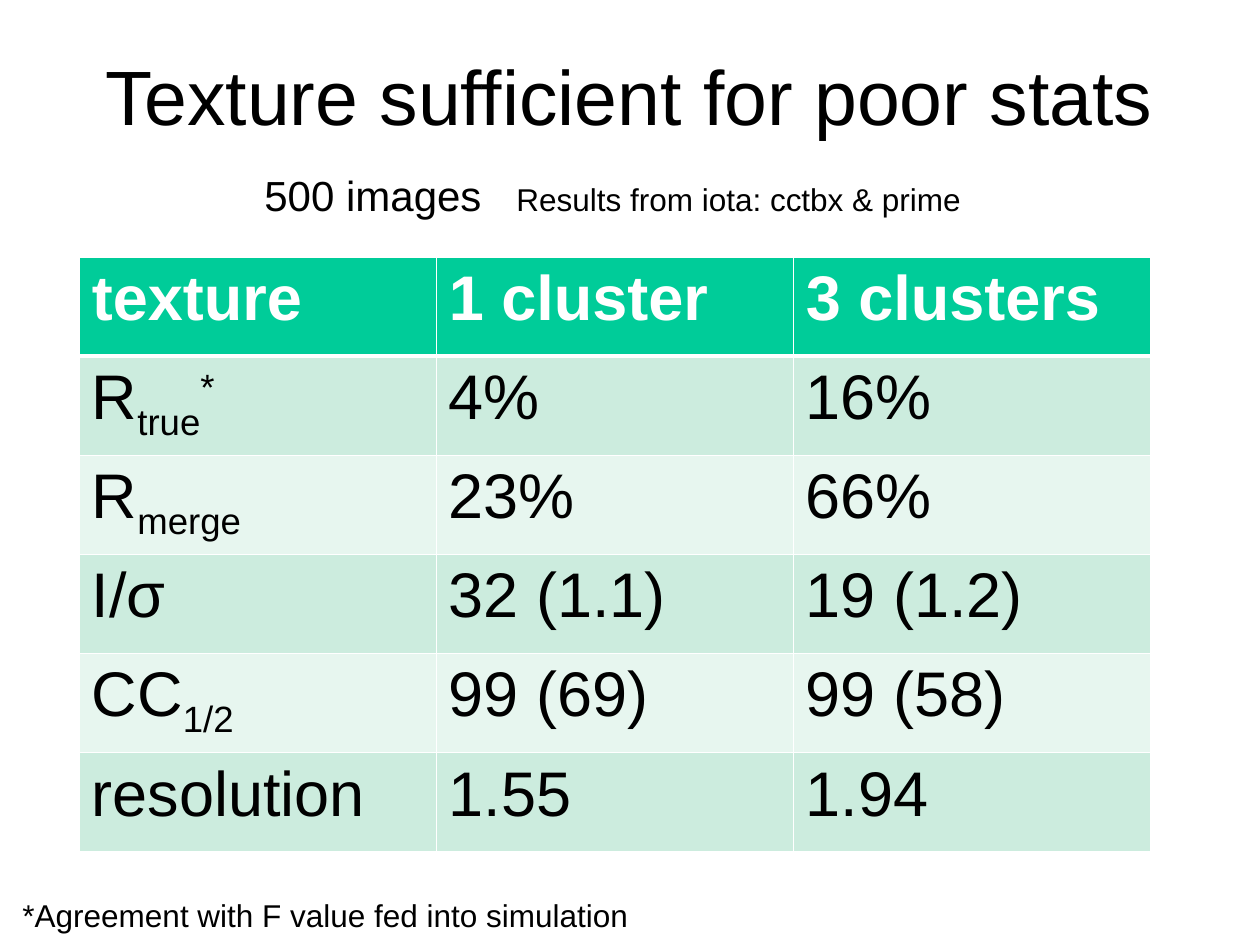
from dataclasses import dataclass

from lxml import etree
from pptx import Presentation
from pptx.dml.color import RGBColor
from pptx.enum import text
from pptx.oxml import ns
from pptx.util import Inches, Pt


@dataclass(frozen=True)
class Theme:
    font: str = "Arial"
    ink: str = "000000"
    white: str = "FFFFFF"
    header: str = "00CC99"
    bands: tuple = ("CCECDE", "E7F6EF")
    title_size: int = 44
    table_size: int = 36
    lead_size: int = 24
    note_size: int = 18
    rule: int = 1
    header_rule: int = 3


THEME = Theme()
SUBSCRIPT, SUPERSCRIPT = -25000, 30000

# Each cell is a list of (wording, baseline shift) pieces.
RESULTS = [
    [[("texture", 0)], [("1 cluster", 0)], [("3 clusters", 0)]],
    [[("R", 0), ("true", SUBSCRIPT), ("*", SUPERSCRIPT)], [("4%", 0)], [("16%", 0)]],
    [[("R", 0), ("merge", SUBSCRIPT)], [("23%", 0)], [("66%", 0)]],
    [[("I/σ", 0)], [("32 (1.1)", 0)], [("19 (1.2)", 0)]],
    [[("CC", 0), ("1/2", SUBSCRIPT)], [("99 (69)", 0)], [("99 (58)", 0)]],
    [[("resolution", 0)], [("1.55", 0)], [("1.94", 0)]],
]


def add_run(paragraph, wording, size, color=THEME.ink, bold=False, baseline=0):
    run = paragraph.add_run()
    run.text = wording
    run.font.name = THEME.font
    run.font.size = Pt(size)
    run.font.bold = bold
    run.font.color.rgb = RGBColor.from_string(color)
    if baseline:
        run.font._element.set("baseline", str(baseline))


def add_title(slide, wording):
    title = slide.shapes.title
    title.left, title.top = Inches(0), Inches(0)
    title.width, title.height = Inches(10), Inches(1.5)
    title.text_frame.vertical_anchor = text.MSO_ANCHOR.MIDDLE
    heading = title.text_frame.paragraphs[0]
    heading.alignment = text.PP_ALIGN.CENTER
    add_run(heading, wording, THEME.title_size)


def add_line(slide, left, top, width, height, pieces, tab=None):
    """Add one line of (wording, size) pieces, with an optional tab stop."""
    box = slide.shapes.add_textbox(*map(Inches, (left, top, width, height)))
    box.text_frame.word_wrap = False
    line = box.text_frame.paragraphs[0]
    if tab:
        stops = etree.SubElement(line._p.get_or_add_pPr(), ns.qn("a:tabLst"))
        etree.SubElement(stops, ns.qn("a:tab"), pos=str(Inches(tab)), algn="l")
    for wording, size in pieces:
        add_run(line, wording, size)


def set_borders(cell, top, bottom):
    """Draw white borders; top and bottom are widths in points."""
    properties = cell._tc.get_or_add_tcPr()
    widths = {"L": THEME.rule, "R": THEME.rule, "T": top, "B": bottom}
    for side, width in widths.items():
        border = etree.SubElement(properties, ns.qn(f"a:ln{side}"), w=str(Pt(width)))
        fill = etree.SubElement(border, ns.qn("a:solidFill"))
        etree.SubElement(fill, ns.qn("a:srgbClr"), val=THEME.white)


def add_results_table(slide):
    columns, rows = len(RESULTS[0]), len(RESULTS)
    table = slide.shapes.add_table(
        rows, columns, Inches(0.63), Inches(2.04), Inches(8.5), Inches(4.72)
    ).table
    for row, cells in enumerate(RESULTS):
        is_header = row == 0
        background = THEME.header if is_header else THEME.bands[(row - 1) % 2]
        color = THEME.white if is_header else THEME.ink
        top = THEME.header_rule if row == 1 else THEME.rule
        bottom = THEME.header_rule if is_header else THEME.rule
        for column, pieces in enumerate(cells):
            cell = table.cell(row, column)
            set_borders(cell, top, bottom)
            cell.fill.solid()
            cell.fill.fore_color.rgb = RGBColor.from_string(background)
            for wording, baseline in pieces:
                add_run(cell.text_frame.paragraphs[0], wording,
                        THEME.table_size, color, is_header, baseline)


def main():
    deck = Presentation()
    deck.slide_width, deck.slide_height = Inches(10), Inches(7.5)
    slide = deck.slides.add_slide(deck.slide_layouts.get_by_name("Title Only"))
    add_title(slide, "Texture sufficient for poor stats")
    add_results_table(slide)
    add_line(slide, 2, 1.3, 5.79, 0.5,
             [("500 images\t", THEME.lead_size),
              ("Results from iota: cctbx & prime", THEME.note_size)], tab=2)
    add_line(slide, 0.08, 7.06, 5.05, 0.4,
             [("*Agreement with F value fed into simulation", THEME.note_size)])
    deck.save("out.pptx")


if __name__ == "__main__":
    main()
